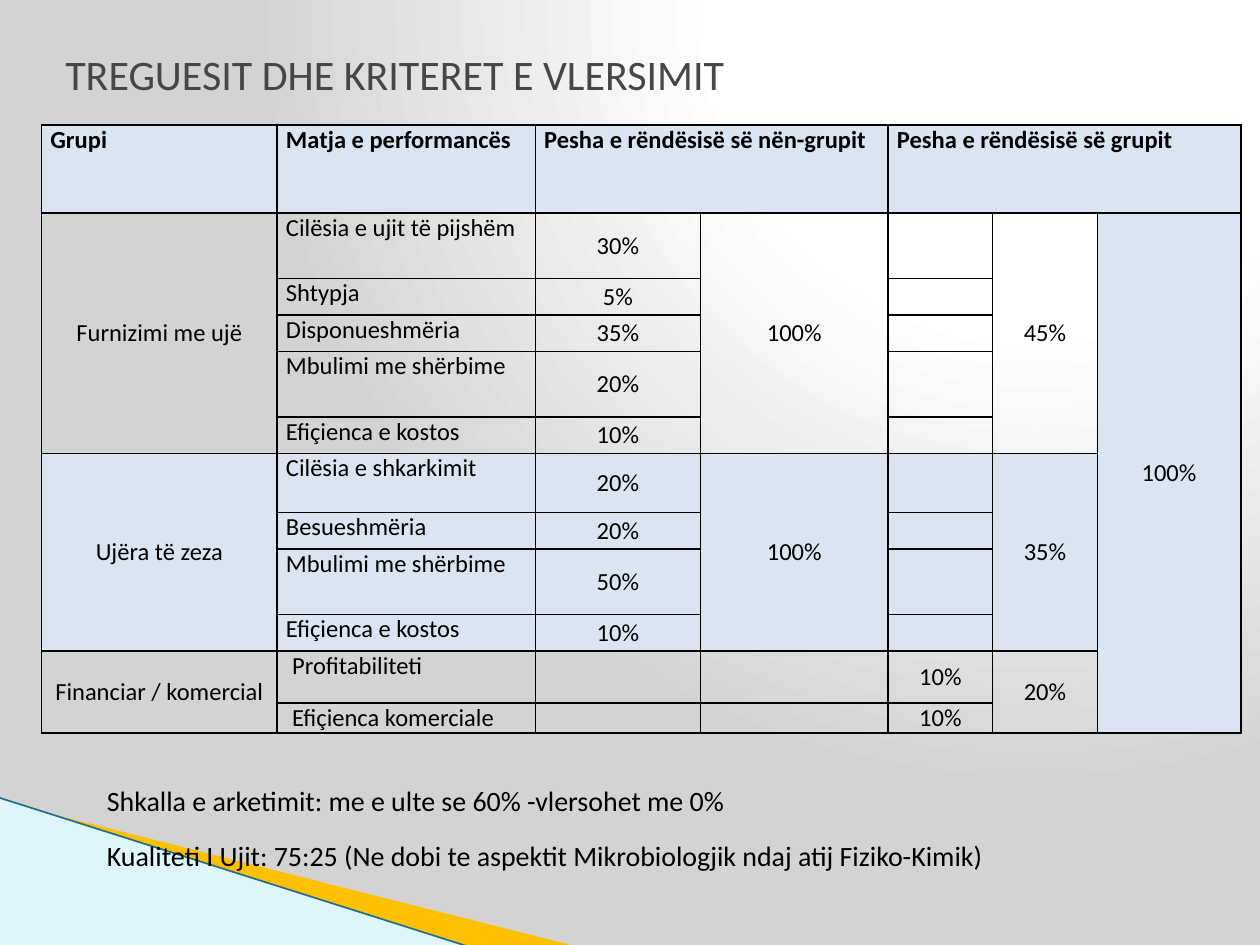
from lxml import etree
from pptx import Presentation
from pptx.dml.color import RGBColor
from pptx.enum.shapes import MSO_CONNECTOR, MSO_SHAPE
from pptx.enum.text import MSO_ANCHOR, PP_ALIGN
from pptx.oxml import parse_xml
from pptx.oxml.ns import nsdecls, qn
from pptx.util import Inches, Pt

FONT = "Calibri"
BLACK = RGBColor(0x00, 0x00, 0x00)
TITLE_GREY = RGBColor(0x46, 0x46, 0x46)
BAND_BLUE = RGBColor(0xDB, 0xE5, 0xF1)
AMBER = RGBColor(0xFF, 0xC0, 0x00)
PALE_CYAN = RGBColor(0xDE, 0xF5, 0xFA)
TEAL = RGBColor(0x1F, 0x6F, 0x87)

COLUMN_WIDTHS = [1.87, 2.05, 1.31, 1.49, 0.83, 0.83, 1.14]
ROW_HEIGHTS = [0.7, 0.52, 0.29, 0.29, 0.52, 0.29, 0.47, 0.29, 0.52, 0.29, 0.41, 0.24]
HEADINGS = {0: "Grupi", 1: "Matja e performancës",
            2: "Pesha e rëndësisë së nën-grupit", 4: "Pesha e rëndësisë së grupit"}
# Group, subgroup total, group weight, banded, measures (name, subgroup weight, group weight)
GROUPS = [
    ("Furnizimi me ujë", "100%", "45%", False, [
        ("Cilësia e ujit të pijshëm", "30%", ""), ("Shtypja", "5%", ""),
        ("Disponueshmëria", "35%", ""), ("Mbulimi me shërbime", "20%", ""),
        ("Efiçienca e kostos", "10%", "")]),
    ("Ujëra të zeza", "100%", "35%", True, [
        ("Cilësia e shkarkimit", "20%", ""), ("Besueshmëria", "20%", ""),
        ("Mbulimi me shërbime", "50%", ""), ("Efiçienca e kostos", "10%", "")]),
    ("Financiar / komercial", "", "20%", False, [
        ("Profitabiliteti", "", "10%"), ("Efiçienca komerciale", "", "10%")]),
]
NOTES = ["Shkalla e arketimit: me e ulte se 60% -vlersohet me 0%",
         "Kualiteti I Ujit: 75:25 (Ne dobi te aspektit Mikrobiologjik ndaj atij Fiziko-Kimik)"]


def style_text(paragraph, size, color, bold=False):
    for run in paragraph.runs:
        run.font.name = FONT
        run.font.size = Pt(size)
        run.font.bold = bold
        run.font.color.rgb = color


def paint_background(slide):
    slide.background.fill.solid()
    solid = slide.element.xpath(".//p:bgPr/a:solidFill")[0]
    stops = "".join(f'<a:gs pos="{pos}"><a:srgbClr val="{color}"/></a:gs>'
                    for pos, color in [(0, "FFFFFF"), (40000, "FFFFFF"), (100000, "D3D3D3")])
    solid.getparent().replace(solid, parse_xml(
        f'<a:gradFill {nsdecls("a")} rotWithShape="1"><a:gsLst>{stops}</a:gsLst>'
        '<a:path path="circle"><a:fillToRect l="65000" t="0" r="0" b="98000"/></a:path>'
        "</a:gradFill>"))


def add_corner(slide, left, top, width, height):
    # Amber sliver
    outline = [(0.54, 0.16), (4.58, 1.18), (3.73, 1.19), (0.55, 0.17)]
    points = [(left + Inches(x), top + Inches(y)) for x, y in outline]
    builder = slide.shapes.build_freeform(*points[0])
    builder.add_line_segments(points[1:], close=True)
    sliver = builder.convert_to_shape()
    # Pale triangle
    triangle = slide.shapes.add_shape(MSO_SHAPE.RIGHT_TRIANGLE, left, top, width, height)
    for shape, color in [(sliver, AMBER), (triangle, PALE_CYAN)]:
        shape.shadow.inherit = False
        shape.fill.solid()
        shape.fill.fore_color.rgb = color
        shape.line.fill.background()
    # Sloping edge
    edge = slide.shapes.add_connector(MSO_CONNECTOR.STRAIGHT, left, top,
                                      left + width, top + height)
    edge.line.color.rgb = TEAL
    edge.line.width = Pt(0.95)
    etree.SubElement(edge.element.spPr, qn("a:effectLst"))


def add_title(slide, left, top, width, height):
    frame = slide.shapes.add_textbox(left, top, width, height).text_frame
    frame.word_wrap = True
    frame.vertical_anchor = MSO_ANCHOR.MIDDLE
    frame.text = "TREGUESIT DHE KRITERET E VLERSIMIT"
    style_text(frame.paragraphs[0], 24, TITLE_GREY)


def format_cell(cell):
    cell.fill.background()
    cell.margin_left = cell.margin_right = Inches(0.07)
    cell.margin_top = cell.margin_bottom = 0
    properties = cell._tc.get_or_add_tcPr()
    for index, side in enumerate(("lnL", "lnR", "lnT", "lnB")):
        properties.insert(index, parse_xml(
            f'<a:{side} {nsdecls("a")} w="12700"><a:solidFill>'
            f'<a:srgbClr val="{BLACK}"/></a:solidFill></a:{side}>'))
    # Keeps empty cells from stretching their rows
    etree.SubElement(cell.text_frame.paragraphs[0]._p, qn("a:endParaRPr"), sz="1400")


def fill_cell(cell, text, banded=False, bold=False, centred=True, indent=0):
    if banded:
        cell.fill.solid()
        cell.fill.fore_color.rgb = BAND_BLUE
    if not text:
        return
    cell.text = text
    cell.vertical_anchor = MSO_ANCHOR.MIDDLE if centred else MSO_ANCHOR.TOP
    cell.margin_left = Inches(0.07 + indent)
    paragraph = cell.text_frame.paragraphs[0]
    paragraph.alignment = PP_ALIGN.CENTER if centred else PP_ALIGN.LEFT
    style_text(paragraph, 14, BLACK, bold)


def add_criteria_table(slide, left, top, width, height):
    table = slide.shapes.add_table(len(ROW_HEIGHTS), len(COLUMN_WIDTHS),
                                   left, top, width, height).table
    table.first_row = table.horz_banding = False
    for column, size in zip(table.columns, COLUMN_WIDTHS):
        column.width = Inches(size)
    for row, size in zip(table.rows, ROW_HEIGHTS):
        row.height = Inches(size)
    for cell in table.iter_cells():
        format_cell(cell)

    # Header
    table.cell(0, 2).merge(table.cell(0, 3))
    table.cell(0, 4).merge(table.cell(0, 6))
    for column, heading in HEADINGS.items():
        fill_cell(table.cell(0, column), heading, True, True, centred=False)

    # Groups and their measures
    first = 1
    for group, total, weight, banded, measures in GROUPS:
        last = first + len(measures) - 1
        for row, (measure, sub_weight, group_weight) in enumerate(measures, first):
            fill_cell(table.cell(row, 1), measure, banded, centred=False,
                      indent=0 if total else 0.05)
            fill_cell(table.cell(row, 2), sub_weight, banded)
            fill_cell(table.cell(row, 4), group_weight, banded)
        for column, text in [(0, group), (3, total), (5, weight)]:
            if text:
                table.cell(first, column).merge(table.cell(last, column))
            fill_cell(table.cell(first, column), text, banded)
        first = last + 1

    # Overall total
    table.cell(1, 6).merge(table.cell(first - 1, 6))
    fill_cell(table.cell(1, 6), "100%", True)


def add_notes(slide, left, top, width, height):
    frame = slide.shapes.add_textbox(left, top, width, height).text_frame
    frame.word_wrap = True
    frame.text = "\n".join(NOTES)
    for paragraph in frame.paragraphs:
        paragraph.space_before = paragraph.space_after = Pt(6)
        style_text(paragraph, 16, BLACK)


def main():
    deck = Presentation()
    deck.slide_width, deck.slide_height = Inches(10), Inches(7.5)
    slide = deck.slides.add_slide(deck.slide_layouts[6])
    paint_background(slide)
    add_corner(slide, Inches(-0.01), Inches(6.33), Inches(3.72), Inches(1.18))
    add_title(slide, Inches(0.42), Inches(0.17), Inches(9), Inches(0.83))
    add_criteria_table(slide, Inches(0.33), Inches(0.99), Inches(9.5), Inches(4.84))
    add_notes(slide, Inches(0.75), Inches(6.17), Inches(8.75), Inches(0.81))
    deck.save("out.pptx")


if __name__ == "__main__":
    main()
